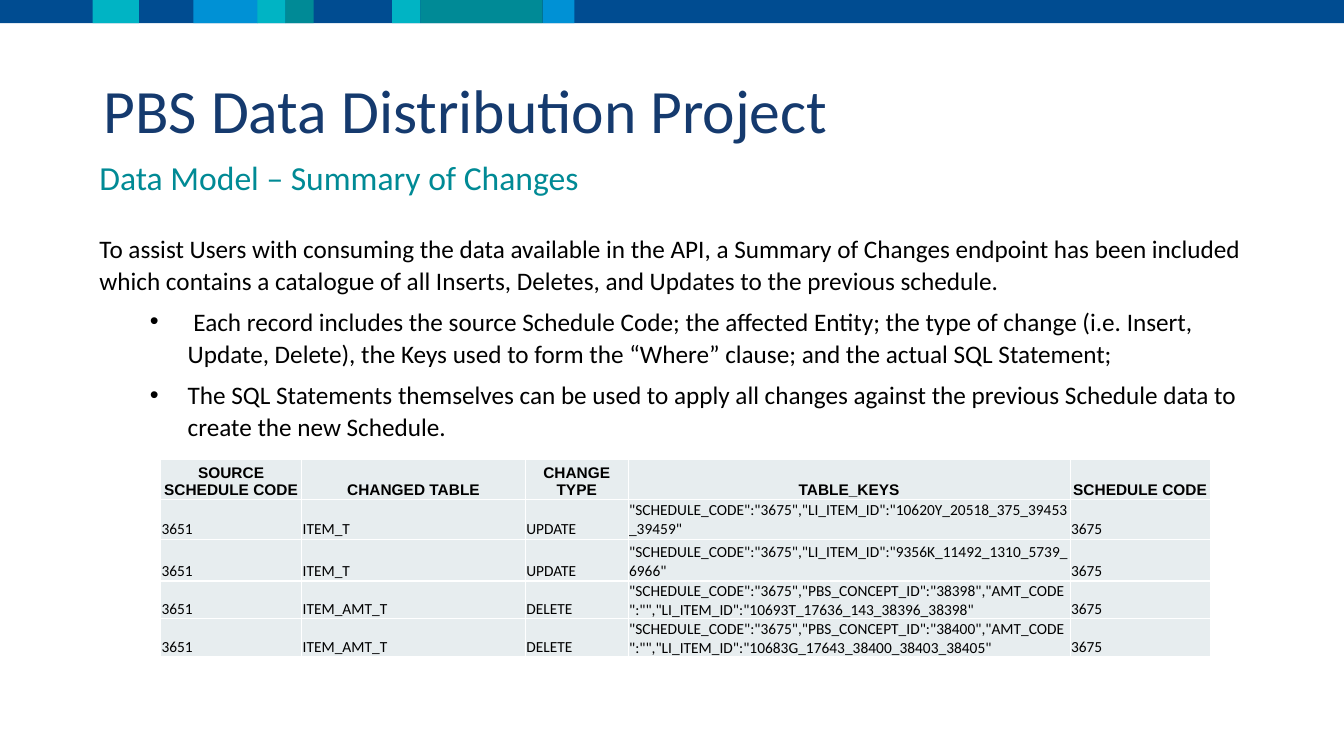
from dataclasses import dataclass

from lxml.etree import SubElement
from pptx import Presentation
from pptx.dml.color import RGBColor
from pptx.enum.shapes import MSO_SHAPE
from pptx.enum.text import MSO_ANCHOR, PP_ALIGN
from pptx.oxml import parse_xml
from pptx.oxml.ns import nsdecls, qn
from pptx.util import Pt


@dataclass(frozen=True)
class Theme:
    """Colours, fonts and type sizes of the deck."""
    navy: str = "004C91"
    cyan: str = "00B4C4"
    sky: str = "0091D5"
    teal: str = "008A96"
    title: str = "153A6E"
    subtitle: str = "008A95"
    text: str = "000000"
    cell: str = "E7EDEF"
    border: str = "FFFFFF"
    font: str = "Calibri"
    header_font: str = "Arial"
    title_size: float = 44
    subtitle_size: float = 24
    body_size: float = 18
    table_size: float = 11


THEME = Theme()

BANDS = [
    (0, 960, THEME.navy),
    (66.2, 33.1, THEME.cyan),
    (138.2, 46.1, THEME.sky),
    (183.9, 20.2, THEME.cyan),
    (203.8, 20.2, THEME.teal),
    (280.1, 20.2, THEME.cyan),
    (300.2, 87.4, THEME.teal),
    (388, 22.3, THEME.sky),
]

INTRO = (
    "To assist Users with consuming the data available in the API, a Summary of Changes "
    "endpoint has been included which contains a catalogue of all Inserts, Deletes, and "
    "Updates to the previous schedule."
)
BULLETS = [
    " Each record includes the source Schedule Code; the affected Entity; the type of change "
    "(i.e. Insert, Update, Delete), the Keys used to form the “Where” clause; and the actual "
    "SQL Statement;",
    "The SQL Statements themselves can be used to apply all changes against the previous "
    "Schedule data to create the new Schedule.",
]

HEADERS = ["SOURCE SCHEDULE CODE", "CHANGED TABLE", "CHANGE TYPE", "TABLE_KEYS", "SCHEDULE CODE"]
CHANGES = [
    ("ITEM_T", "UPDATE",
     '"SCHEDULE_CODE":"3675","LI_ITEM_ID":"10620Y_20518_375_39453_39459"'),
    ("ITEM_T", "UPDATE",
     '"SCHEDULE_CODE":"3675","LI_ITEM_ID":"9356K_11492_1310_5739_6966"'),
    ("ITEM_AMT_T", "DELETE",
     '"SCHEDULE_CODE":"3675","PBS_CONCEPT_ID":"38398","AMT_CODE":"",'
     '"LI_ITEM_ID":"10693T_17636_143_38396_38398"'),
    ("ITEM_AMT_T", "DELETE",
     '"SCHEDULE_CODE":"3675","PBS_CONCEPT_ID":"38400","AMT_CODE":"",'
     '"LI_ITEM_ID":"10683G_17643_38400_38403_38405"'),
]
ROWS = [HEADERS] + [("3651", *change, "3675") for change in CHANGES]
COL_WIDTHS = [100.8, 159.8, 73.4, 315.7, 100.1]
ROW_HEIGHTS = [28.6, 28.6, 29.8, 26.6, 26.6]


def style_font(font, size, color, name=THEME.font, bold=False):
    """Set the size, colour, face and weight of a font."""
    font.size = Pt(size)
    font.color.rgb = RGBColor.from_string(color)
    font.name = name
    font.bold = bold


def add_text(s, x, y, w, h, anchor):
    """Add a wrapping text box and return its text frame."""
    tf = s.shapes.add_textbox(Pt(x), Pt(y), Pt(w), Pt(h)).text_frame
    tf.word_wrap = True
    tf.vertical_anchor = anchor
    return tf


def add_bands(s, x, y, h):
    """Draw the coloured strip along the top of the slide."""
    for dx, w, color in BANDS:
        sp = s.shapes.add_shape(MSO_SHAPE.RECTANGLE, Pt(x + dx), Pt(y), Pt(w), Pt(h))
        sp.shadow.inherit = False
        sp.fill.solid()
        sp.fill.fore_color.rgb = RGBColor.from_string(color)
        sp.line.fill.background()


def add_title(s, x, y, w, h):
    """Write the slide title."""
    tf = add_text(s, x, y, w, h, MSO_ANCHOR.MIDDLE)
    tf.text = "PBS Data Distribution Project"
    p = tf.paragraphs[0]
    p.line_spacing = 0.9
    style_font(p.runs[0].font, THEME.title_size, THEME.title)


def add_body(s, x, y, w, h):
    """Write the subtitle, the introduction and the bullets."""
    tf = add_text(s, x, y, w, h, MSO_ANCHOR.TOP)
    tf.text = "\n".join(["Data Model – Summary of Changes", INTRO, *BULLETS])
    for i, p in enumerate(tf.paragraphs):
        p.line_spacing = 1.07
        p.space_after = Pt(6 if i else 24)
        if i > 1:
            p.level = 1
            pPr = p._p.get_or_add_pPr()
            pPr.set("marL", str(Pt(63)))
            pPr.set("indent", str(Pt(-27)))
            SubElement(pPr, qn("a:buFont")).set("typeface", THEME.header_font)
            SubElement(pPr, qn("a:buChar")).set("char", "•")
        size, color = (THEME.body_size, THEME.text) if i else (THEME.subtitle_size, THEME.subtitle)
        style_font(p.runs[0].font, size, color)


def add_borders(cell):
    """Put a thin line on all four sides of a table cell."""
    tcPr = cell._tc.get_or_add_tcPr()
    for i, side in enumerate("LRTB"):
        tcPr.insert(i, parse_xml(
            f'<a:ln{side} {nsdecls("a")} w="{Pt(1)}"><a:solidFill>'
            f'<a:srgbClr val="{THEME.border}"/></a:solidFill></a:ln{side}>'
        ))


def fill_cell(cell, text, header):
    """Write and style one table cell."""
    cell.fill.solid()
    cell.fill.fore_color.rgb = RGBColor.from_string(THEME.cell)
    add_borders(cell)
    cell.margin_left = cell.margin_right = cell.margin_top = Pt(0.7)
    cell.margin_bottom = Pt(0)
    cell.vertical_anchor = MSO_ANCHOR.BOTTOM
    cell.text_frame.text = text
    p = cell.text_frame.paragraphs[0]
    p.alignment = PP_ALIGN.CENTER if header else PP_ALIGN.LEFT
    name = THEME.header_font if header else THEME.font
    style_font(p.runs[0].font, THEME.table_size, THEME.text, name, header)


def add_changes_table(s, x, y):
    """Build the table of sample change records."""
    frame = s.shapes.add_table(len(ROWS), len(HEADERS), Pt(x), Pt(y),
                               Pt(sum(COL_WIDTHS)), Pt(sum(ROW_HEIGHTS)))
    table = frame.table
    table.horz_banding = False
    for col, width in zip(table.columns, COL_WIDTHS):
        col.width = Pt(width)
    for i, (row, height, texts) in enumerate(zip(table.rows, ROW_HEIGHTS, ROWS)):
        row.height = Pt(height)
        for cell, text in zip(row.cells, texts):
            fill_cell(cell, text, header=i == 0)


def main():
    """Build the slide and save the deck."""
    prs = Presentation()
    prs.slide_width, prs.slide_height = Pt(960), Pt(540)
    s = prs.slides.add_slide(prs.slide_layouts[6])
    add_bands(s, 0, 0, 16.6)
    add_title(s, 67, 54, 861, 54.7)
    add_body(s, 64, 106.6, 832.3, 213.8)
    add_changes_table(s, 114.7, 328)
    prs.save("out.pptx")


if __name__ == "__main__":
    main()
